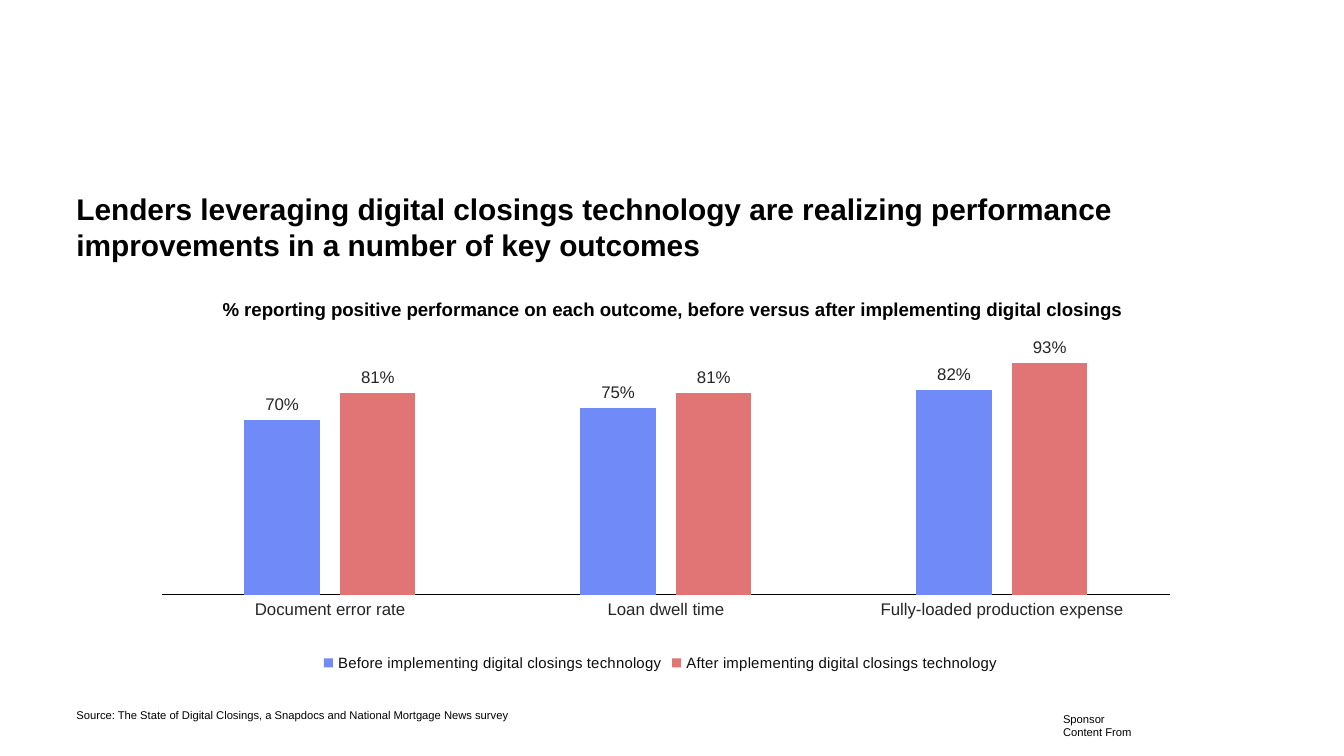
"""Build a slide comparing closing outcomes before and after digital technology."""
from dataclasses import dataclass

import lxml.etree
import pptx
import pptx.chart.data
import pptx.dml.color
import pptx.enum.chart
import pptx.enum.text
import pptx.oxml.ns
import pptx.util

SCALE = 4572


@dataclass(frozen=True)
class Theme:
    font: str = "Arial"
    black: str = "000000"
    label: str = "262626"
    legend: str = "0D0D0D"
    before: str = "708AF7"
    after: str = "E17474"
    small_size: int = 6
    legend_size: int = 8
    label_size: int = 9
    subtitle_size: int = 10
    title_size: int = 16


@dataclass(frozen=True)
class Area:
    left: int
    top: int
    width: int
    height: int

    def emu(self) -> tuple[int, ...]:
        return tuple(side * SCALE for side in (self.left, self.top, self.width, self.height))


@dataclass(frozen=True)
class Series:
    name: str
    values: tuple[float, ...]
    color: str


THEME = Theme()
OUTCOMES = ("Document error rate", "Loan dwell time", "Fully-loaded production expense")
SERIES = (
    Series("Before implementing digital closings technology", (0.70, 0.75, 0.82), THEME.before),
    Series("After implementing digital closings technology", (0.81, 0.81, 0.93), THEME.after),
)
PLOT_LAYOUT = {
    "layoutTarget": "inner", "xMode": "edge", "yMode": "edge",
    "x": 0.01, "y": 0.03, "w": 0.99, "h": 0.73,
}


def rgb(color: str) -> pptx.dml.color.RGBColor:
    return pptx.dml.color.RGBColor.from_string(color)


def style_font(font, size: int, color: str, bold: bool = False) -> None:
    font.name = THEME.font
    font.size = pptx.util.Pt(size)
    font.bold = bold
    font.color.rgb = rgb(color)


def add_text(page, area: Area, text: str, *, size: int = THEME.small_size,
             bold: bool = False, wrap: bool = True, inset: bool = True,
             align=pptx.enum.text.PP_ALIGN.LEFT) -> None:
    frame = page.shapes.add_textbox(*area.emu()).text_frame
    frame.word_wrap = wrap
    if not inset:
        frame.margin_left = frame.margin_top = frame.margin_right = frame.margin_bottom = 0
    para = frame.paragraphs[0]
    para.alignment = align
    for index, line in enumerate(text.split("\n")):
        if index:
            para.add_line_break()
        span = para.add_run()
        span.text = line
        style_font(span.font, size, THEME.black, bold)


def set_plot_layout(chart) -> None:
    plot_area = chart._chartSpace.chart.plotArea
    for old in plot_area.findall(pptx.oxml.ns.qn("c:layout")):
        plot_area.remove(old)
    layout = lxml.etree.Element(pptx.oxml.ns.qn("c:layout"))
    manual = lxml.etree.SubElement(layout, pptx.oxml.ns.qn("c:manualLayout"))
    for name, value in PLOT_LAYOUT.items():
        lxml.etree.SubElement(manual, pptx.oxml.ns.qn(f"c:{name}")).set("val", str(value))
    plot_area.insert(0, layout)


def style_series(bars, color: str) -> None:
    bars.format.fill.solid()
    bars.format.fill.fore_color.rgb = rgb(color)
    bars.invert_if_negative = False
    labels = bars.data_labels
    labels.show_value = True
    labels.position = pptx.enum.chart.XL_LABEL_POSITION.OUTSIDE_END
    labels.number_format = "0%"
    labels.number_format_is_linked = False
    style_font(labels.font, THEME.label_size, THEME.label)


def add_outcome_chart(page, area: Area) -> None:
    data = pptx.chart.data.CategoryChartData(number_format="0%")
    data.categories = OUTCOMES
    for series in SERIES:
        data.add_series(series.name, series.values)
    chart = page.shapes.add_chart(
        pptx.enum.chart.XL_CHART_TYPE.COLUMN_CLUSTERED, *area.emu(), data).chart
    style_font(chart.font, THEME.subtitle_size, THEME.black)
    chart.has_title = False
    set_plot_layout(chart)

    chart.has_legend = True
    chart.legend.position = pptx.enum.chart.XL_LEGEND_POSITION.BOTTOM
    chart.legend.include_in_layout = False
    style_font(chart.legend.font, THEME.legend_size, THEME.legend)

    values = chart.value_axis
    values.minimum_scale, values.maximum_scale = 0, 1
    values.has_major_gridlines = False
    values.visible = False
    outcomes = chart.category_axis
    outcomes.major_tick_mark = pptx.enum.chart.XL_TICK_MARK.NONE
    outcomes.minor_tick_mark = pptx.enum.chart.XL_TICK_MARK.NONE
    outcomes.format.line.color.rgb = rgb(THEME.black)
    outcomes.format.line.width = pptx.util.Pt(0.75)
    style_font(outcomes.tick_labels.font, THEME.label_size, THEME.label)

    plot = chart.plots[0]
    plot.gap_width, plot.overlap = 219, -27
    plot.vary_by_categories = False
    for bars, series in zip(plot.series, SERIES):
        style_series(bars, series.color)


def main() -> None:
    deck = pptx.Presentation()
    deck.slide_width, deck.slide_height = 2000 * SCALE, 1125 * SCALE
    page = deck.slides.add_slide(deck.slide_layouts[6])
    add_text(page, Area(1582, 1060, 234, 40), "Sponsor\nContent From", inset=False)
    add_text(page, Area(94, 1044, 692, 40),
             "Source: The State of Digital Closings, a Snapdocs and National Mortgage News survey",
             wrap=False)
    add_text(page, Area(94, 274, 1724, 164),
             "Lenders leveraging digital closings technology are realizing performance "
             "improvements in a number of key outcomes",
             size=THEME.title_size, bold=True)
    add_outcome_chart(page, Area(226, 499, 1516, 508))
    add_text(page, Area(304, 434, 1392, 54),
             "% reporting positive performance on each outcome, "
             "before versus after implementing digital closings",
             size=THEME.subtitle_size, bold=True, wrap=False,
             align=pptx.enum.text.PP_ALIGN.CENTER)
    deck.save("out.pptx")


if __name__ == "__main__":
    main()
